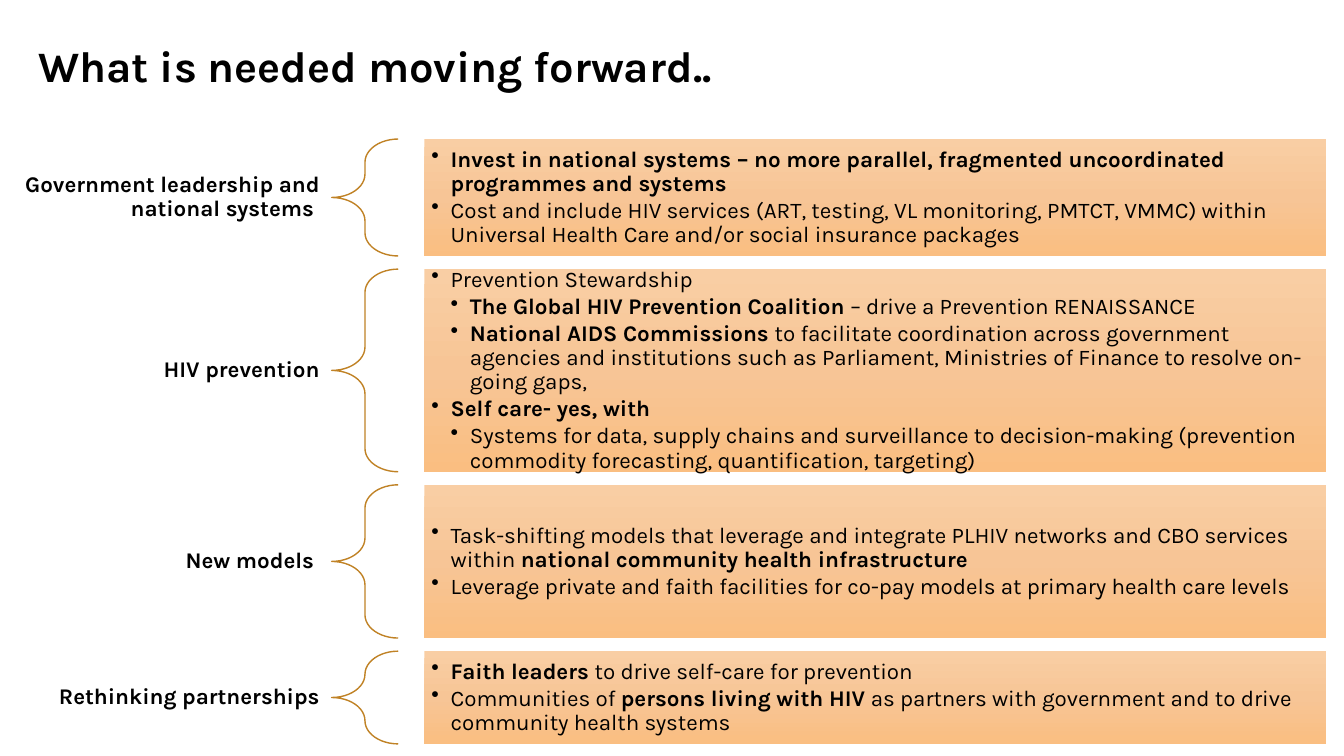
import copy

import pptx
import pptx.dml.color
import pptx.enum.shapes
import pptx.enum.text
import pptx.oxml
import pptx.oxml.ns
import pptx.util
from pptx.util import Inches

BLACK = pptx.dml.color.RGBColor(0x00, 0x00, 0x00)
BRACE_BROWN = pptx.dml.color.RGBColor(0xC0, 0x82, 0x25)
PANEL_STOPS = [
    (0, pptx.dml.color.RGBColor(0xF9, 0xCE, 0xA4)),
    (0.5, pptx.dml.color.RGBColor(0xF7, 0xC5, 0x96)),
    (1, pptx.dml.color.RGBColor(0xFA, 0xBE, 0x81)),
]
FONT = "Karla"
ROWS_TOP, ROW_GAP = 1.38, 0.13
LABEL_WIDTH, LABEL_HEIGHT = 3.29, 0.71
BRACE_WIDTH = 0.66
PANEL_LEFT, PANEL_WIDTH = 4.21, 8.94
BULLET_INDENT = 0.19

# Each theme: label, row height, points; each point: level, (text, bold) pieces.
THEMES = [
    ("Government leadership and national systems ", 1.16, [
        (1, [("Invest in national systems – no more parallel, fragmented "
              "uncoordinated programmes and systems", True)]),
        (1, [("Cost and include HIV services (ART, testing, VL monitoring, PMTCT, VMMC) "
              "within Universal Health Care and/or social insurance packages", False)]),
    ]),
    ("HIV prevention", 2.01, [
        (1, [("Prevention Stewardship", False)]),
        (2, [("The Global HIV Prevention Coalition ", True),
             ("– drive a Prevention RENAISSANCE", False)]),
        (2, [("National AIDS Commissions ", True),
             ("to facilitate coordination across government agencies and institutions such as "
              "Parliament, Ministries of Finance to resolve on-going gaps,", False)]),
        (1, [("Self care- yes, with", True)]),
        (2, [("Systems for data, supply chains and surveillance to decision-making "
              "(prevention commodity forecasting, quantification, targeting)", False)]),
    ]),
    ("New models ", 1.52, [
        (1, [("Task-shifting models that leverage and integrate PLHIV networks and CBO "
              "services within ", False),
             ("national community health infrastructure", True)]),
        (1, [("Leverage private and faith facilities for co-pay models at primary health "
              "care levels", False)]),
    ]),
    ("Rethinking partnerships", 0.92, [
        (1, [("Faith leaders ", True), ("to drive self-care for prevention", False)]),
        (1, [("Communities of ", False), ("persons living with HIV ", True),
             ("as partners with government and to drive community health systems", False)]),
    ]),
]


def format_run(run, size, bold):
    run.font.name = FONT
    run.font.size = pptx.util.Pt(size)
    run.font.bold = bold
    run.font.color.rgb = BLACK


def set_frame(frame, side, vertical):
    frame.word_wrap = True
    frame.vertical_anchor = pptx.enum.text.MSO_ANCHOR.MIDDLE
    frame.margin_left = frame.margin_right = Inches(side)
    frame.margin_top = frame.margin_bottom = Inches(vertical)


def add_title(slide, left, top, width, height):
    title = slide.shapes.title
    title.left, title.top = Inches(left), Inches(top)
    title.width, title.height = Inches(width), Inches(height)
    title.text_frame.text = "What is needed moving forward.."
    set_frame(title.text_frame, 0.1, 0.05)
    heading = title.text_frame.paragraphs[0]
    heading.alignment = pptx.enum.text.PP_ALIGN.LEFT
    heading.line_spacing = 0.9
    format_run(heading.runs[0], 31, True)


def add_label(slide, text, middle):
    label = slide.shapes.add_textbox(0, Inches(middle - LABEL_HEIGHT / 2),
                                     Inches(LABEL_WIDTH), Inches(LABEL_HEIGHT))
    label.text_frame.text = text
    set_frame(label.text_frame, 0.12, 0.04)
    paragraph = label.text_frame.paragraphs[0]
    paragraph.alignment = pptx.enum.text.PP_ALIGN.RIGHT
    paragraph.line_spacing = 0.9
    format_run(paragraph.runs[0], 16, True)


def add_brace(slide, top, height):
    brace = slide.shapes.add_shape(pptx.enum.shapes.MSO_SHAPE.LEFT_BRACE, Inches(LABEL_WIDTH),
                                   Inches(top), Inches(BRACE_WIDTH), Inches(height))
    brace.adjustments[0] = 0.35
    brace.shadow.inherit = False
    brace.fill.background()
    brace.line.color.rgb = BRACE_BROWN
    brace.line.width = pptx.util.Pt(1)


def fill_panel(panel):
    panel.fill.gradient()
    panel.fill.gradient_angle = 270
    stop_list = panel.fill._xPr.find(".//" + pptx.oxml.ns.qn("a:gsLst"))
    stop_list.insert(1, copy.deepcopy(stop_list[0]))
    for stop, (position, color) in zip(panel.fill.gradient_stops, PANEL_STOPS):
        stop.position = position
        stop.color.rgb = color


def format_point(paragraph, level):
    paragraph.level = level
    paragraph.alignment = pptx.enum.text.PP_ALIGN.LEFT
    paragraph.line_spacing = 0.9
    paragraph.space_after = pptx.util.Pt(2.1)
    properties = paragraph._p.get_or_add_pPr()
    properties.set("marL", str(Inches(BULLET_INDENT * level)))
    properties.set("indent", str(-Inches(BULLET_INDENT)))
    bullet = pptx.oxml.parse_xml(
        '<a:buChar %s char="•"/>' % pptx.oxml.ns.nsdecls("a"))
    properties.append(bullet)


def add_panel(slide, points, top, height):
    panel = slide.shapes.add_shape(pptx.enum.shapes.MSO_SHAPE.RECTANGLE, Inches(PANEL_LEFT),
                                   Inches(top), Inches(PANEL_WIDTH), Inches(height))
    panel.shadow.inherit = False
    panel.line.fill.background()
    fill_panel(panel)
    frame = panel.text_frame
    set_frame(frame, 0.07, 0.07)
    for index, (level, pieces) in enumerate(points):
        paragraph = frame.add_paragraph() if index else frame.paragraphs[0]
        format_point(paragraph, level)
        for text, bold in pieces:
            run = paragraph.add_run()
            run.text = text
            format_run(run, 16, bold)


def add_themes(slide, top):
    for label, height, points in THEMES:
        add_label(slide, label, top + height / 2)
        add_brace(slide, top, height)
        add_panel(slide, points, top, height)
        top += height + ROW_GAP


def main():
    presentation = pptx.Presentation()
    presentation.slide_width = Inches(13.33)
    presentation.slide_height = Inches(7.5)
    slide = presentation.slides.add_slide(presentation.slide_layouts[5])
    add_title(slide, 0.28, 0.11, 12.57, 1.14)
    add_themes(slide, ROWS_TOP)
    presentation.save("out.pptx")


if __name__ == "__main__":
    main()
